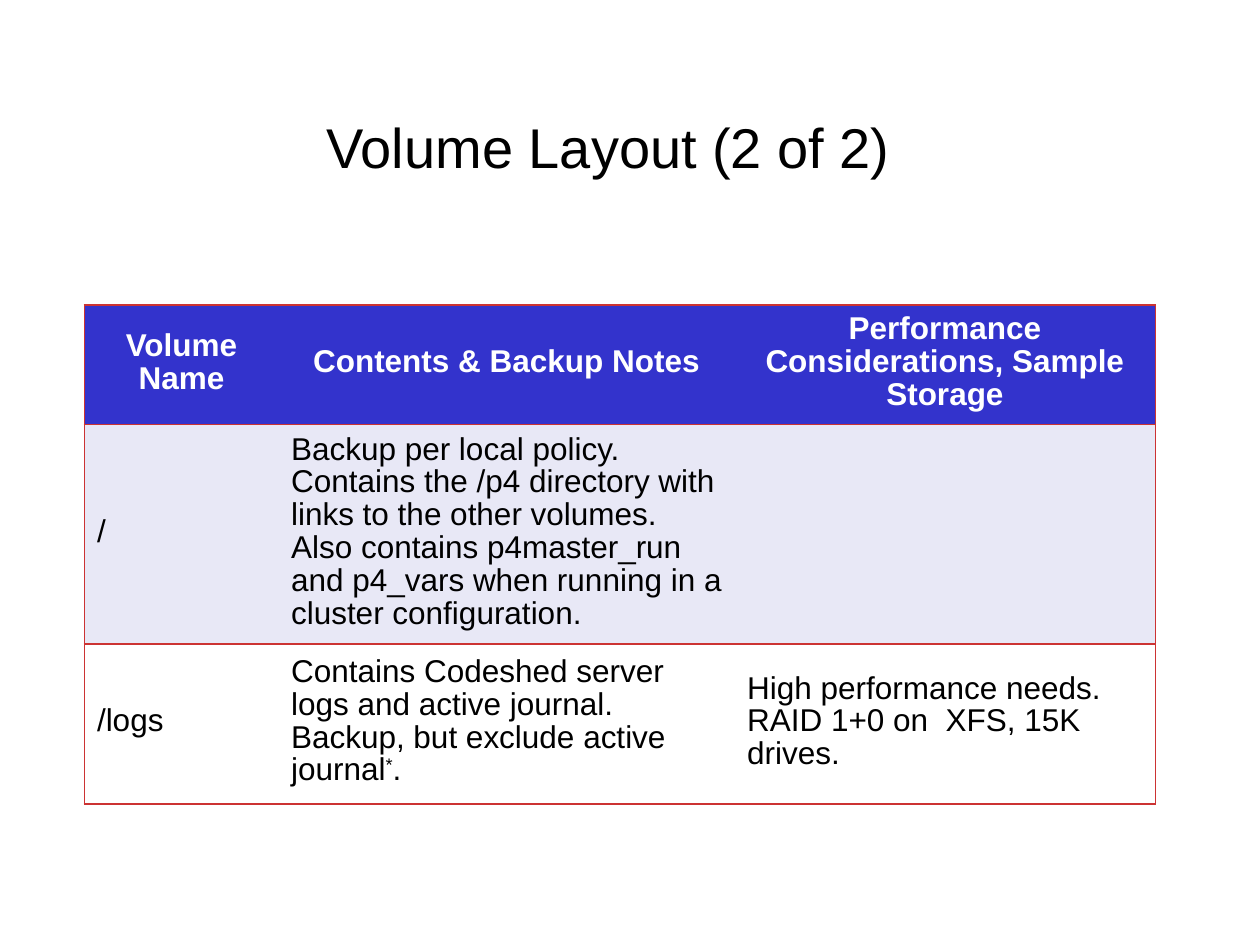
import dataclasses
import lxml.etree
import pptx
import pptx.dml.color
import pptx.enum.text
import pptx.oxml.ns
import pptx.util

Inches = pptx.util.Inches
RGB = pptx.dml.color.RGBColor
ALIGN = pptx.enum.text.PP_ALIGN
MIDDLE = pptx.enum.text.MSO_ANCHOR.MIDDLE

BLACK = RGB(0x00, 0x00, 0x00)
WHITE = RGB(0xFF, 0xFF, 0xFF)
BLUE = RGB(0x33, 0x33, 0xCC)
PALE = RGB(0xE8, 0xE8, 0xF6)
RED = RGB(0xCC, 0x33, 0x33)

WIDTHS = (1.54, 3.62, 3.34)
PADS = {
    "margin_left": Inches(0.1),
    "margin_right": Inches(0.1),
    "margin_top": Inches(0.02),
    "margin_bottom": Inches(0.05),
    "vertical_anchor": MIDDLE,
}


@dataclasses.dataclass(frozen=True)
class Row:
    high: float
    fill: RGB
    ink: RGB
    bold: bool
    align: ALIGN
    texts: tuple


ROWS = (
    Row(0.95, BLUE, WHITE, True, ALIGN.CENTER, (
        ("Volume Name",),
        ("Contents & Backup Notes",),
        ("Performance Considerations, Sample Storage",),
    )),
    Row(1.74, PALE, BLACK, False, ALIGN.LEFT, (
        ("/",),
        ("Backup per local policy.  Contains the /p4 directory with links to "
         "the other volumes. Also contains p4master_run and p4_vars when "
         "running in a cluster configuration.",),
        (),
    )),
    Row(1.27, WHITE, BLACK, False, ALIGN.LEFT, (
        ("/logs",),
        ("Contains Codeshed server logs and active journal.  Backup, but "
         "exclude active journal", "*", "."),
        ("High performance needs.  RAID 1+0 on  XFS, 15K drives.",),
    )),
)


def apply(item: object, values: dict) -> None:
    for name, value in values.items():
        setattr(item, name, value)


def style(font: object, size: int, ink: RGB, bold: bool) -> None:
    apply(font, {"name": "Arial", "size": pptx.util.Pt(size), "bold": bold})
    font.color.rgb = ink


def edge(cell: object, sides: str) -> None:
    props = cell._tc.get_or_add_tcPr()
    qn = pptx.oxml.ns.qn
    for side in "LRTB":
        line = lxml.etree.SubElement(
            props, qn(f"a:ln{side}"), w=str(int(pptx.util.Pt(1))))
        if side in sides:
            fill = lxml.etree.SubElement(line, qn("a:solidFill"))
            lxml.etree.SubElement(fill, qn("a:srgbClr"), val=str(RED))
        else:
            lxml.etree.SubElement(line, qn("a:noFill"))


def draw_cell(cell: object, row: Row, parts: tuple, sides: str) -> None:
    edge(cell, sides)
    cell.fill.solid()
    cell.fill.fore_color.rgb = row.fill
    apply(cell, PADS)
    para = cell.text_frame.paragraphs[0]
    apply(para, {"alignment": row.align, "line_spacing": 0.93})
    style(para.font, 18, row.ink, row.bold)
    for part in parts:
        run = para.add_run()
        run.text = part
        style(run.font, 18, row.ink, row.bold)
        if part == "*":
            run._r.get_or_add_rPr().set("baseline", "30000")


def draw_title(slide: object) -> None:
    title = slide.shapes.title
    apply(title, {"left": Inches(0.33), "top": Inches(0.83),
                  "width": Inches(9), "height": Inches(0.66)})
    frame = title.text_frame
    frame.text = "Volume Layout (2 of 2)"
    apply(frame, {"vertical_anchor": MIDDLE, "word_wrap": True,
                  "auto_size": pptx.enum.text.MSO_AUTO_SIZE.NONE})
    para = frame.paragraphs[0]
    para.alignment = ALIGN.CENTER
    style(para.runs[0].font, 32, BLACK, False)


def draw_table(slide: object) -> None:
    high = sum(row.high for row in ROWS)
    table = slide.shapes.add_table(
        len(ROWS), len(WIDTHS), Inches(0.67), Inches(2.42),
        Inches(sum(WIDTHS)), Inches(high)).table
    for col, width in zip(table.columns, WIDTHS):
        col.width = Inches(width)
    ends = {0: "LTB", len(WIDTHS) - 1: "RTB"}
    for y, row in enumerate(ROWS):
        table.rows[y].height = Inches(row.high)
        for x, parts in enumerate(row.texts):
            draw_cell(table.cell(y, x), row, parts, ends.get(x, "TB"))


def main() -> None:
    deck = pptx.Presentation()
    apply(deck, {"slide_width": Inches(10), "slide_height": Inches(7.5)})
    slide = deck.slides.add_slide(deck.slide_layouts[5])
    draw_title(slide)
    draw_table(slide)
    deck.save("out.pptx")


if __name__ == "__main__":
    main()
